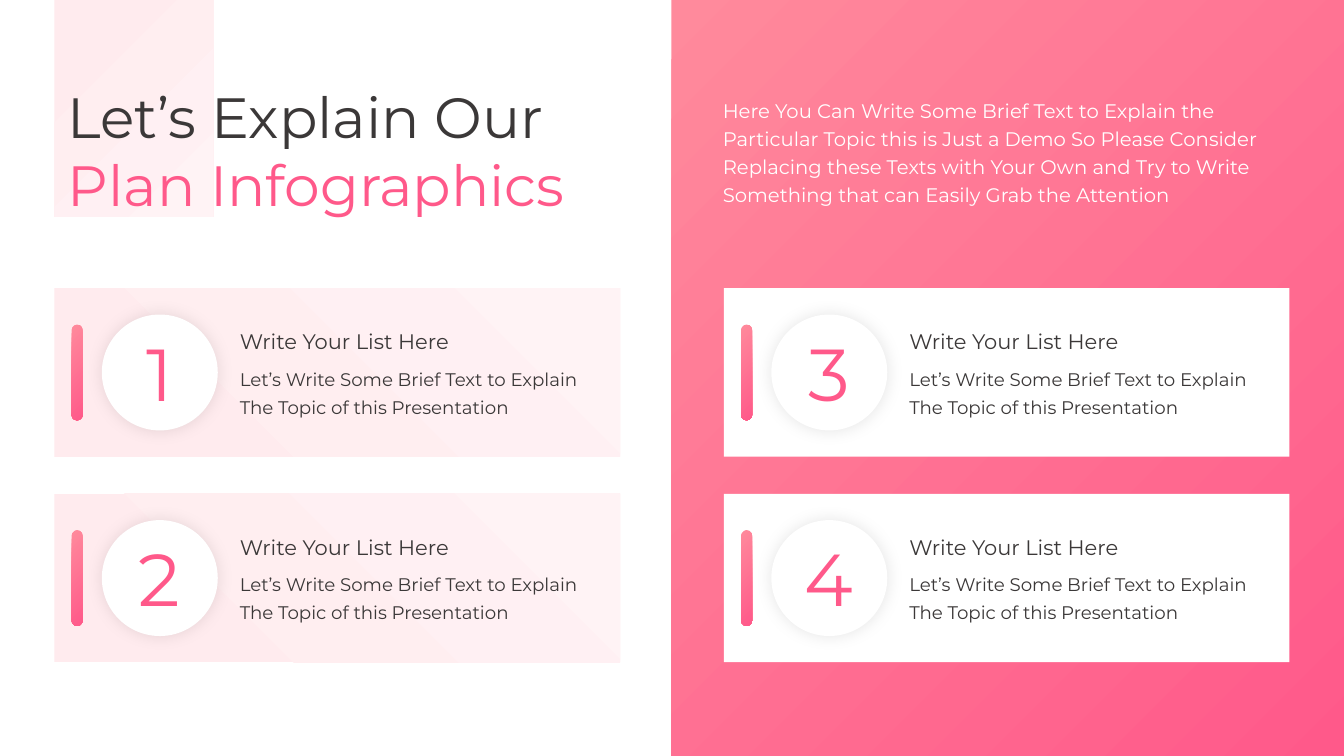
from lxml import etree
from pptx import Presentation
from pptx.dml.color import RGBColor
from pptx.enum import shapes, text
from pptx.oxml import ns
from pptx.util import Inches, Pt

WHITE = RGBColor(0xFF, 0xFF, 0xFF)
DARK = RGBColor(0x3B, 0x38, 0x38)
PINK = RGBColor(0xFF, 0x59, 0x8A)
CORAL = RGBColor(0xFF, 0x8A, 0x9C)
BLUSH = RGBColor(0xFF, 0xEB, 0xEE)
PALE = RGBColor(0xFF, 0xF3, 0xF5)

# Gradients: first colour, its position, last colour, angle
BRIGHT = (CORAL, 0, PINK, 315)
SOFT_RISING = (BLUSH, 0.1, PALE, 45)
SOFT_FALLING = (BLUSH, 0.1, PALE, 315)

RECT = shapes.MSO_SHAPE.RECTANGLE
OVAL = shapes.MSO_SHAPE.OVAL
ROUNDED = shapes.MSO_SHAPE.ROUNDED_RECTANGLE


class InfographicSlide:
    font = "Montserrat"

    def __init__(self, prs):
        self.s = prs.slides.add_slide(prs.slide_layouts[5])

    def shape(self, kind, x, y, w, h, fill):
        sp = self.s.shapes.add_shape(kind, *map(Inches, (x, y, w, h)))
        sp.shadow.inherit = False
        sp.line.fill.background()
        if isinstance(fill, RGBColor):
            sp.fill.solid()
            sp.fill.fore_color.rgb = fill
        else:
            first, start, last, angle = fill
            sp.fill.gradient()
            sp.fill.gradient_angle = angle
            stops = sp.fill.gradient_stops
            stops[0].color.rgb, stops[0].position = first, start
            stops[1].color.rgb, stops[1].position = last, 1
        return sp

    def glow(self, sp):
        """Soft, centred shadow at 10 percent black."""
        effects = sp._element.spPr.find(ns.qn("a:effectLst"))
        shadow = etree.SubElement(effects, ns.qn("a:outerShdw"),
                                  blurRad=str(Pt(12)), dist="0", algn="ctr")
        color = etree.SubElement(shadow, ns.qn("a:srgbClr"), val="000000")
        etree.SubElement(color, ns.qn("a:alpha"), val="10000")

    def fill_text(self, tf, lines, size, colors, align, spacing=None,
                  wrap=False):
        tf.word_wrap = wrap
        tf.auto_size = text.MSO_AUTO_SIZE.SHAPE_TO_FIT_TEXT
        tf.vertical_anchor = text.MSO_ANCHOR.TOP
        for i, line in enumerate(lines):
            p = tf.add_paragraph() if i else tf.paragraphs[0]
            p.text = line
            p.alignment = align
            p.font.name = self.font
            p.font.size = Pt(size)
            p.font.color.rgb = colors[i % len(colors)]
            if spacing:
                p.line_spacing = Pt(spacing)

    def title(self, x, y, w, h, lines, size, colors):
        sp = self.s.shapes.title
        sp.left, sp.top, sp.width, sp.height = map(Inches, (x, y, w, h))
        self.fill_text(sp.text_frame, lines, size, colors, text.PP_ALIGN.LEFT)
        # Bring the title in front of the blocks drawn so far
        self.s.shapes._spTree.append(sp._element)

    def text(self, x, y, w, h, lines, size, color,
             align=text.PP_ALIGN.LEFT, spacing=None, wrap=False):
        sp = self.s.shapes.add_textbox(*map(Inches, (x, y, w, h)))
        self.fill_text(sp.text_frame, lines, size, [color], align, spacing,
                       wrap)
        return sp

    def card(self, x, y, number, fill):
        self.shape(RECT, x, y, 5.61, 1.67, fill)
        circle = self.shape(OVAL, x + 0.47, y + 0.26, 1.15, 1.15, WHITE)
        self.glow(circle)
        self.text(x + 0.68, y + 0.34, 0.72, 0.98, [str(number)], 52.5, PINK,
                  text.PP_ALIGN.CENTER)
        bar = self.shape(ROUNDED, x + 0.17, y + 0.36, 0.11, 0.95, BRIGHT)
        bar.adjustments[0] = 0.5
        self.text(x + 1.74, y + 0.35, 2.49, 0.35,
                  ["Write Your List Here"], 15, DARK)
        sp = self.text(x + 1.74, y + 0.74, 3.64, 0.58,
                       ["Let’s Write Some Brief Text to Explain",
                        "The Topic of this Presentation"], 13, DARK)
        sp.text_frame.paragraphs[1].line_spacing = Pt(20)


def main():
    prs = Presentation()
    prs.slide_width, prs.slide_height = Inches(13.33), Inches(7.5)
    slide = InfographicSlide(prs)

    # Background blocks
    slide.shape(RECT, 0.54, 0, 1.58, 2.15, SOFT_FALLING)
    slide.shape(RECT, 6.66, 0, 6.67, 7.5, BRIGHT)

    # Heading and introduction
    slide.title(0.57, 0.76, 5.54, 1.46,
                ["Let’s Explain Our", "Plan Infographics"], 40.5, [DARK, PINK])
    slide.text(7.07, 0.89, 5.62, 1.2,
               ["Here You Can Write Some Brief Text to Explain the",
                "Particular Topic this is Just a Demo So Please Consider",
                "Replacing these Texts with Your Own and Try to Write",
                "Something that can Easily Grab the Attention"],
               14, WHITE, spacing=20, wrap=True)

    # Numbered cards, column by column
    columns = [(0.54, SOFT_RISING), (7.18, WHITE)]
    for col, (x, fill) in enumerate(columns):
        for row in range(2):
            slide.card(x, 2.86 + 2.04 * row, 2 * col + row + 1, fill)

    prs.save("out.pptx")


if __name__ == "__main__":
    main()
